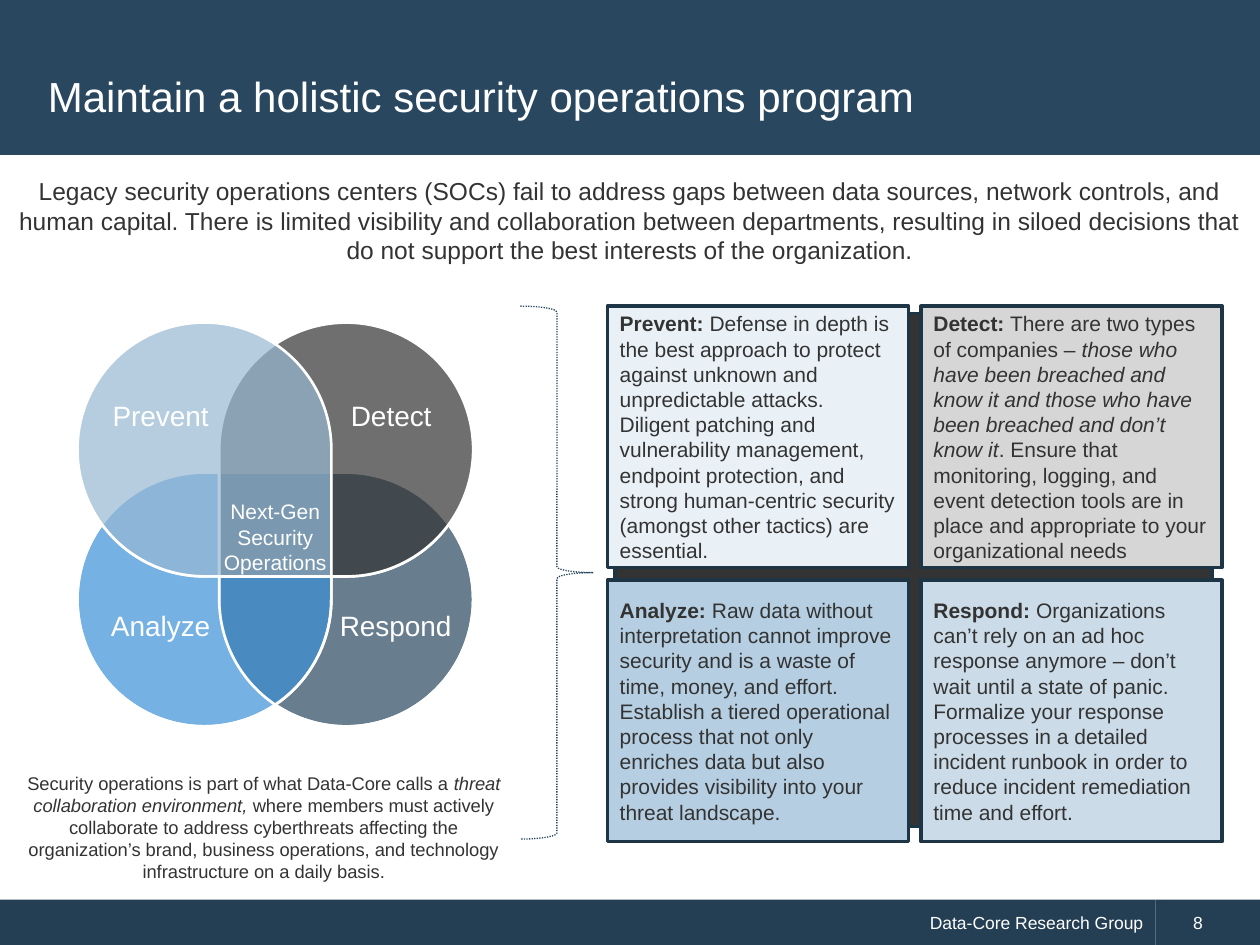
import pptx
import pptx.util
import pptx.dml.color
import pptx.enum.dml
import pptx.enum.shapes
import pptx.enum.text
import pptx.oxml
import pptx.oxml.ns
from dataclasses import dataclass

SHAPE = pptx.enum.shapes.MSO_SHAPE
ALIGN = pptx.enum.text.PP_ALIGN
ANCHOR = pptx.enum.text.MSO_ANCHOR


@dataclass(frozen=True)
class Theme:
    font: str = "Arial"
    ink: str = "333333"
    white: str = "FFFFFF"
    head: str = "29475F"
    foot: str = "243F54"
    edge: str = "1E3546"
    brace: str = "27465E"
    blue: str = "3C91D8"
    sky: str = "96B8D2"
    pale: str = "EAF1F6"
    gray: str = "D6D6D6"
    mist: str = "CBDBE8"
    steel: str = "B5CEE1"
    title: float = 24
    label: float = 16
    lead: float = 14
    body: float = 12
    note: float = 10.5
    small: float = 10


class Board:
    """Draws on one slide; places are (column, row, columns, rows)."""
    cols, rows = 100, 75

    def __init__(self, deck, theme):
        self.theme = theme
        self.unit = (deck.slide_width / self.cols, deck.slide_height / self.rows)
        self.slide = deck.slides.add_slide(deck.slide_layouts[5])
        self.shapes = self.slide.shapes

    def place(self, spot):
        return [round(n * self.unit[i % 2]) for i, n in enumerate(spot)]

    def color(self, tone):
        return pptx.dml.color.RGBColor.from_string(tone)

    def fill_text(self, frame, parts, size, tone, align=ALIGN.LEFT,
                  anchor=ANCHOR.MIDDLE, gap=None):
        """Fill a frame with (text, style) parts; style is '', 'b' or 'i'."""
        frame.word_wrap = True
        frame.vertical_anchor = anchor
        para = frame.paragraphs[0]
        para.alignment = align
        if gap:
            para.line_spacing = gap
        for text, style in parts:
            run = para.add_run()
            run.text = text
            font = run.font
            font.name, font.size = self.theme.font, pptx.util.Pt(size)
            font.bold, font.italic = style == "b", style == "i"
            font.color.rgb = self.color(tone)

    def title(self, spot, text):
        item = self.shapes.title
        item.left, item.top, item.width, item.height = self.place(spot)
        self.fill_text(item.text_frame, [(text, "")], self.theme.title,
                       self.theme.white)

    def text(self, spot, parts, size, tone, anchor=ANCHOR.TOP, gap=None):
        item = self.shapes.add_textbox(*self.place(spot))
        self.fill_text(item.text_frame, parts, size, tone, ALIGN.CENTER, anchor, gap)

    def shape(self, kind, spot, fill=None, line=None, width=1, alpha=None):
        item = self.shapes.add_shape(kind, *self.place(spot))
        item.shadow.inherit = False
        if fill:
            item.fill.solid()
            item.fill.fore_color.rgb = self.color(fill)
        else:
            item.fill.background()
        if alpha:
            tint = item._element.spPr.find(".//" + pptx.oxml.ns.qn("a:srgbClr"))
            tint.append(pptx.oxml.parse_xml(
                f'<a:alpha {pptx.oxml.ns.nsdecls("a")} val="{alpha * 1000}"/>'))
        if line:
            item.line.color.rgb = self.color(line)
            item.line.width = pptx.util.Pt(width)
        else:
            item.line.fill.background()
        return item

    def band(self, spot, fill):
        """Add a plain bar behind everything else."""
        item = self.shape(SHAPE.RECTANGLE, spot, fill)
        self.shapes._spTree.insert(2, item._element)

    def foot(self, spot, text, align, inset=1):
        item = self.shape(SHAPE.RECTANGLE, spot, self.theme.foot)
        item.text_frame.margin_left = round(inset * self.unit[0])
        self.fill_text(item.text_frame, [(text, "")], self.theme.small,
                       self.theme.white, align)

    def card(self, spot, fill, parts):
        item = self.shape(SHAPE.RECTANGLE, spot, fill, self.theme.edge, 2)
        self.fill_text(item.text_frame, parts, self.theme.body, self.theme.ink)

    def petal(self, spot, turn, fill=None):
        item = self.shape(SHAPE.TEAR, spot, fill, self.theme.white, 1.5,
                          70 if fill else None)
        item.rotation = turn

    def brace(self, spot):
        item = self.shape(SHAPE.RIGHT_BRACE, spot, None, self.theme.brace, 0.75)
        item.line.dash_style = pptx.enum.dml.MSO_LINE.ROUND_DOT


def venn(board):
    theme = board.theme
    left, right, top, low, size = 6.15, 17.4, 25.6, 37.5, 20.15
    petals = {
        "Respond": (right, low, 270, theme.head),
        "Analyze": (left, low, 0, theme.blue),
        "Detect": (right, top, 180, theme.ink),
        "Prevent": (left, top, 90, theme.sky),
    }
    labels = {"Respond": (25.3, 48.2, 12.2), "Analyze": (7, 48.2, 11.5),
              "Detect": (25.3, 31.5, 11.5), "Prevent": (7, 31.5, 11.5)}

    def draw(names, filled=True):
        for name in names:
            x, y, turn, fill = petals[name]
            board.petal((x, y, size, size), turn, fill if filled else None)

    names = list(petals)
    draw(names[:2])
    draw(names, filled=False)
    draw(names[2:])
    for name, (x, y, wide) in labels.items():
        board.text((x, y, wide, 3.3), [(name, "")], theme.label, theme.white,
                   ANCHOR.MIDDLE, 0.85)
    board.text((16.7, 39.1, 10.3, 7.1), [("Next-Gen Security Operations", "")],
               theme.body, theme.white)


def cards(board):
    theme = board.theme
    board.shape(SHAPE.RECTANGLE, (48.8, 24.9, 47.4, 40.7), theme.ink, theme.edge, 2)
    items = [
        (theme.pale, [("Prevent: ", "b"), (
            "Defense in depth is the best approach to protect against unknown and "
            "unpredictable attacks. Diligent patching and vulnerability management, "
            "endpoint protection, and strong human-centric security (amongst other "
            "tactics) are essential.", "")]),
        (theme.gray, [("Detect:", "b"), (" There are two types of companies – ", ""), (
            "those who have been breached and know it and those who have been "
            "breached and don’t know it", "i"), (
            ". Ensure that monitoring, logging, and event detection tools are in "
            "place and appropriate to your organizational needs", "")]),
        (theme.steel, [("Analyze:", "b"), (
            " Raw data without interpretation cannot improve security and is a waste "
            "of time, money, and effort. Establish a tiered operational process that "
            "not only enriches data but also provides visibility into your threat "
            "landscape.", "")]),
        (theme.mist, [("Respond:", "b"), (
            " Organizations can’t rely on an ad hoc response anymore – don’t wait "
            "until a state of panic. Formalize your response processes in a detailed "
            "incident runbook in order to reduce incident remediation time and "
            "effort.", "")]),
    ]
    wide, high, gap = 23.9, 20.75, 1
    for i, (fill, parts) in enumerate(items):
        row, col = divmod(i, 2)
        spot = (48.2 + col * (wide + gap), 24.3 + row * (high + gap), wide, high)
        board.card(spot, fill, parts)


def main():
    deck = pptx.Presentation()
    deck.slide_width, deck.slide_height = pptx.util.Inches(10), pptx.util.Inches(7.5)
    theme = Theme()
    board = Board(deck, theme)
    board.band((0, 0, 100, 12.3), theme.head)
    board.title((2.8, 2.8, 94.3, 9.6), "Maintain a holistic security operations program")
    board.foot((0, 71.4, 91.7, 3.6), "Data-Core Research Group", ALIGN.RIGHT)
    board.foot((91.7, 71.4, 8.3, 3.6), "8", ALIGN.LEFT, 3)
    board.text((0, 13.5, 100, 8.1), [(
        "Legacy security operations centers (SOCs) fail to address gaps between data "
        "sources, network controls, and human capital. There is limited visibility and "
        "collaboration between departments, resulting in siloed decisions that do not "
        "support the best interests of the organization.", "")], theme.lead, theme.ink)
    cards(board)
    board.brace((41.3, 24.3, 5.8, 42.3))
    board.text((1.1, 60.8, 39.7, 9.8), [
        ("Security operations is part of what Data-Core calls a ", ""),
        ("threat collaboration environment,", "i"),
        (" where members must actively collaborate to address cyberthreats affecting "
         "the organization’s brand, business operations, and technology infrastructure "
         "on a daily basis.", "")], theme.note, theme.ink)
    venn(board)
    deck.save("out.pptx")


if __name__ == "__main__":
    main()
